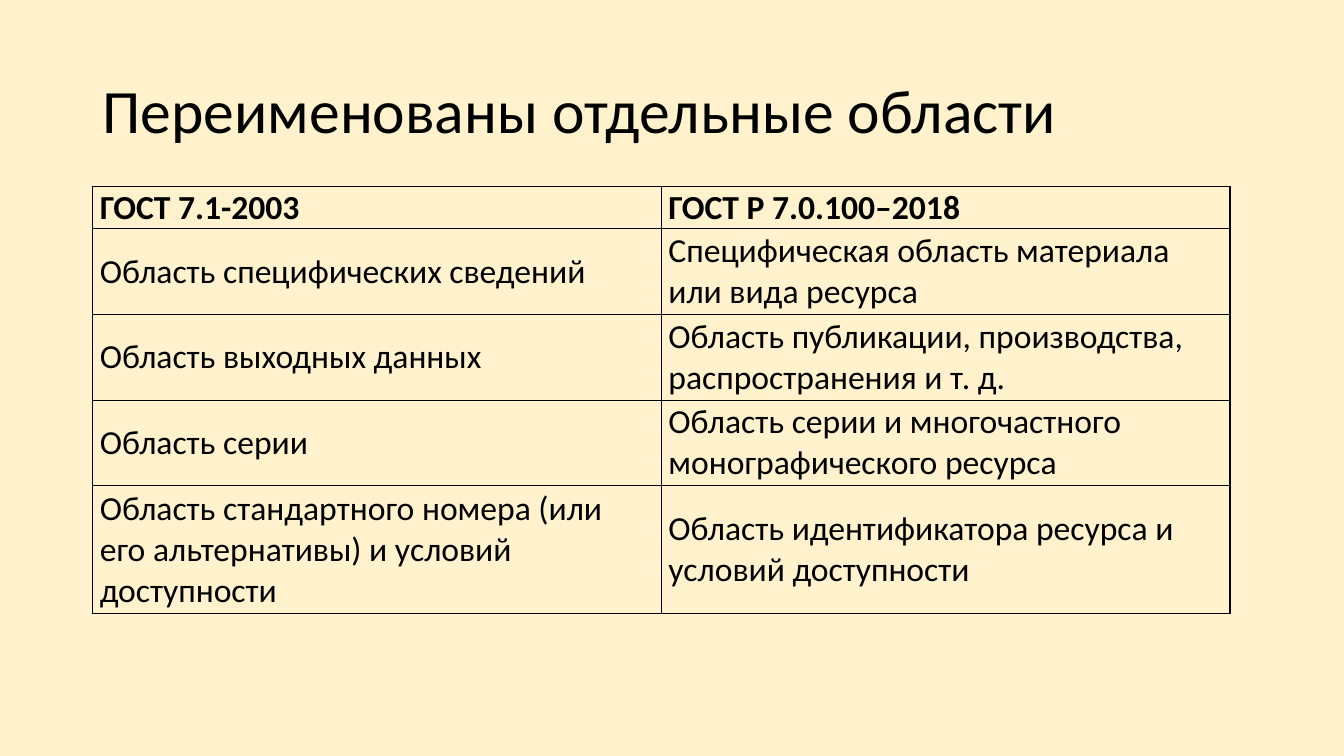
import pptx
import pptx.util
import pptx.dml.color
import pptx.enum.text
import pptx.oxml
import pptx.oxml.ns
from lxml import etree

Inches = pptx.util.Inches
Pt = pptx.util.Pt
MIDDLE = pptx.enum.text.MSO_ANCHOR.MIDDLE

COLORS = {"back": "FFF2CC", "ink": "000000"}
FONT = "Calibri"
HEADING = "Переименованы отдельные области"
ROWS = [
    ("ГОСТ 7.1-2003", "ГОСТ Р 7.0.100–2018"),
    ("Область специфических сведений",
     "Специфическая область материала или вида ресурса"),
    ("Область выходных данных",
     "Область публикации, производства, распространения и т. д."),
    ("Область серии",
     "Область серии и многочастного монографического ресурса"),
    ("Область стандартного номера (или его альтернативы) и условий доступности",
     "Область идентификатора ресурса и условий доступности"),
]
HEIGHTS = [0.42, 0.85, 0.85, 0.85, 1.27]


def color(name):
    return pptx.dml.color.RGBColor.from_string(COLORS[name])


def write(frame, text, size, bold=False):
    frame.text = text
    para = frame.paragraphs[0]
    font = para.runs[0].font
    font.name, font.size, font.bold = FONT, Pt(size), bold
    font.color.rgb = color("ink")
    return para


def border(cell):
    props = cell._tc.get_or_add_tcPr()
    # Border lines must come before the cell fill
    for place, side in enumerate(("lnL", "lnR", "lnT", "lnB")):
        line = etree.Element(pptx.oxml.ns.qn("a:" + side), w=str(Pt(1)))
        fill = etree.SubElement(line, pptx.oxml.ns.qn("a:solidFill"))
        etree.SubElement(fill, pptx.oxml.ns.qn("a:srgbClr"), val=COLORS["ink"])
        props.insert(place, line)


def add_title(slide, left, top, width, height):
    box = slide.shapes.add_textbox(
        Inches(left), Inches(top), Inches(width), Inches(height))
    frame = box.text_frame
    frame.word_wrap = True
    frame.vertical_anchor = MIDDLE
    write(frame, HEADING, 44).line_spacing = 0.9


def add_grid(slide, left, top, width):
    count = len(ROWS[0])
    table = slide.shapes.add_table(
        len(ROWS), count, Inches(left), Inches(top),
        Inches(width), Inches(sum(HEIGHTS))).table
    table.horz_banding = False
    for col in table.columns:
        col.width = Inches(width / count)
    for r, (texts, height) in enumerate(zip(ROWS, HEIGHTS)):
        table.rows[r].height = Inches(height)
        for c, text in enumerate(texts):
            cell = table.cell(r, c)
            cell.margin_left = cell.margin_right = Inches(0.07)
            cell.margin_top = cell.margin_bottom = 0
            cell.vertical_anchor = MIDDLE
            cell.fill.background()
            border(cell)
            write(cell.text_frame, text, 24, bold=r == 0)


def main():
    deck = pptx.Presentation()
    deck.slide_width, deck.slide_height = Inches(13.33), Inches(7.5)
    slide = deck.slides.add_slide(deck.slide_layouts[6])
    # Background
    fill = slide.background.fill
    fill.solid()
    fill.fore_color.rgb = color("back")
    # Heading and comparison table
    add_title(slide, 0.92, 0.4, 11.5, 1.45)
    add_grid(slide, 0.92, 1.85, 11.28)
    deck.save("out.pptx")


if __name__ == "__main__":
    main()
